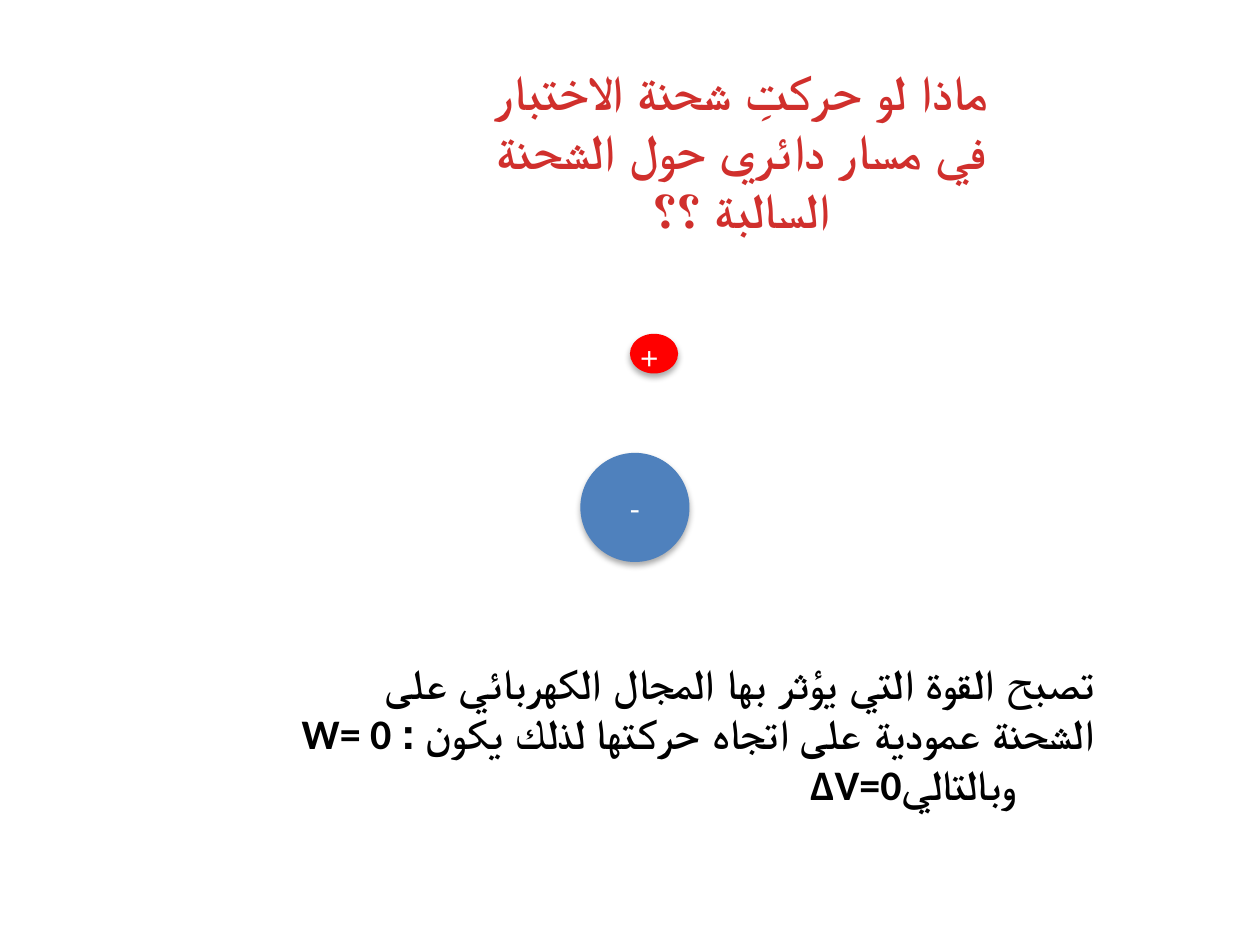
from dataclasses import dataclass

import lxml.etree
import pptx
import pptx.dml.color
import pptx.enum.shapes
import pptx.enum.text
import pptx.oxml.ns
import pptx.util

Cm = pptx.util.Cm
Pt = pptx.util.Pt
Color = pptx.dml.color.RGBColor
Align = pptx.enum.text.PP_ALIGN
Anchor = pptx.enum.text.MSO_ANCHOR
qn = pptx.oxml.ns.qn


@dataclass(frozen=True)
class Theme:
    font: str = "Calibri"
    title: Color = Color(0xD0, 0x2F, 0x2C)
    body: Color = Color(0, 0, 0)
    sign: Color = Color(255, 255, 255)
    minus: Color = Color(0x4F, 0x81, 0xBD)
    plus: Color = Color(255, 0, 0)
    title_size: int = 28
    body_size: int = 24
    sign_size: int = 18


THEME = Theme()


@dataclass(frozen=True)
class Box:
    left: float
    top: float
    width: float
    height: float

    def place(self) -> tuple:
        return Cm(self.left), Cm(self.top), Cm(self.width), Cm(self.height)


@dataclass(frozen=True)
class Style:
    size: int
    color: Color
    align: Align
    bold: bool = True


@dataclass(frozen=True)
class Line:
    text: str
    indent: float = 0
    tab: float = 0


@dataclass(frozen=True)
class Charge:
    sign: str
    fill: Color
    box: Box


TITLE = Style(THEME.title_size, THEME.title, Align.CENTER)
BODY = Style(THEME.body_size, THEME.body, Align.RIGHT)
SIGN = Style(THEME.sign_size, THEME.sign, Align.CENTER, False)

CHARGES = [
    Charge("-", THEME.minus, Box(11.7, 9.13, 2.2, 2.2)),
    Charge("+", THEME.plus, Box(12.7, 6.73, 0.97, 0.8)),
]


def write(frame, lines: list[Line], style: Style) -> None:
    """Fill the frame with right-to-left paragraphs."""
    frame.word_wrap = True
    for i, line in enumerate(lines):
        para = frame.add_paragraph() if i else frame.paragraphs[0]
        para.alignment = style.align
        props = para._p.get_or_add_pPr()
        props.set("rtl", "1")
        if line.indent:
            props.set("marL", str(Cm(line.indent)))
            props.set("indent", "0")
        if line.tab:
            tabs = lxml.etree.SubElement(props, qn("a:tabLst"))
            lxml.etree.SubElement(
                tabs, qn("a:tab"), pos=str(Cm(line.tab)), algn="l")
        run = para.add_run()
        run.text = line.text
        run.font.name = THEME.font
        run.font.size = Pt(style.size)
        run.font.bold = style.bold
        run.font.color.rgb = style.color


def add_text(slide, box: Box, lines: list[Line], style: Style) -> None:
    write(slide.shapes.add_textbox(*box.place()).text_frame, lines, style)


def add_shade(shape) -> None:
    """Give the shape a soft shadow just below it."""
    shape.shadow.inherit = False
    effects = shape._element.spPr.find(qn("a:effectLst"))
    outer = lxml.etree.SubElement(
        effects, qn("a:outerShdw"), blurRad=str(Pt(3.5)),
        dist=str(Pt(2.2)), dir="5400000", algn="ctr", rotWithShape="0")
    color = lxml.etree.SubElement(outer, qn("a:srgbClr"), val="000000")
    lxml.etree.SubElement(color, qn("a:alpha"), val="32000")


def add_charge(slide, charge: Charge) -> None:
    oval = slide.shapes.add_shape(
        pptx.enum.shapes.MSO_SHAPE.OVAL, *charge.box.place())
    oval.fill.solid()
    oval.fill.fore_color.rgb = charge.fill
    oval.line.fill.background()
    add_shade(oval)
    oval.text_frame.vertical_anchor = Anchor.MIDDLE
    write(oval.text_frame, [Line(charge.sign)], SIGN)


def main() -> None:
    deck = pptx.Presentation()
    deck.slide_width, deck.slide_height = Cm(25.4), Cm(19.05)
    slide = deck.slides.add_slide(deck.slide_layouts[6])
    add_text(slide, Box(7.9, 1.12, 14.1, 2.64), [
        Line("ماذا لو حركتِ شحنة الاختبار"),
        Line("في مسار دائري حول الشحنة السالبة ؟؟"),
    ], TITLE)
    for charge in CHARGES:
        add_charge(slide, charge)
    add_text(slide, Box(5.31, 13.13, 17, 3.33), [
        Line("تصبح القوة التي يؤثر بها المجال الكهربائي على الشحنة "
             "عمودية على اتجاه حركتها لذلك يكون : W= 0"),
        Line("وبالتالي\tΔV=0", indent=1.6, tab=5.1),
    ], BODY)
    deck.save("out.pptx")


if __name__ == "__main__":
    main()
